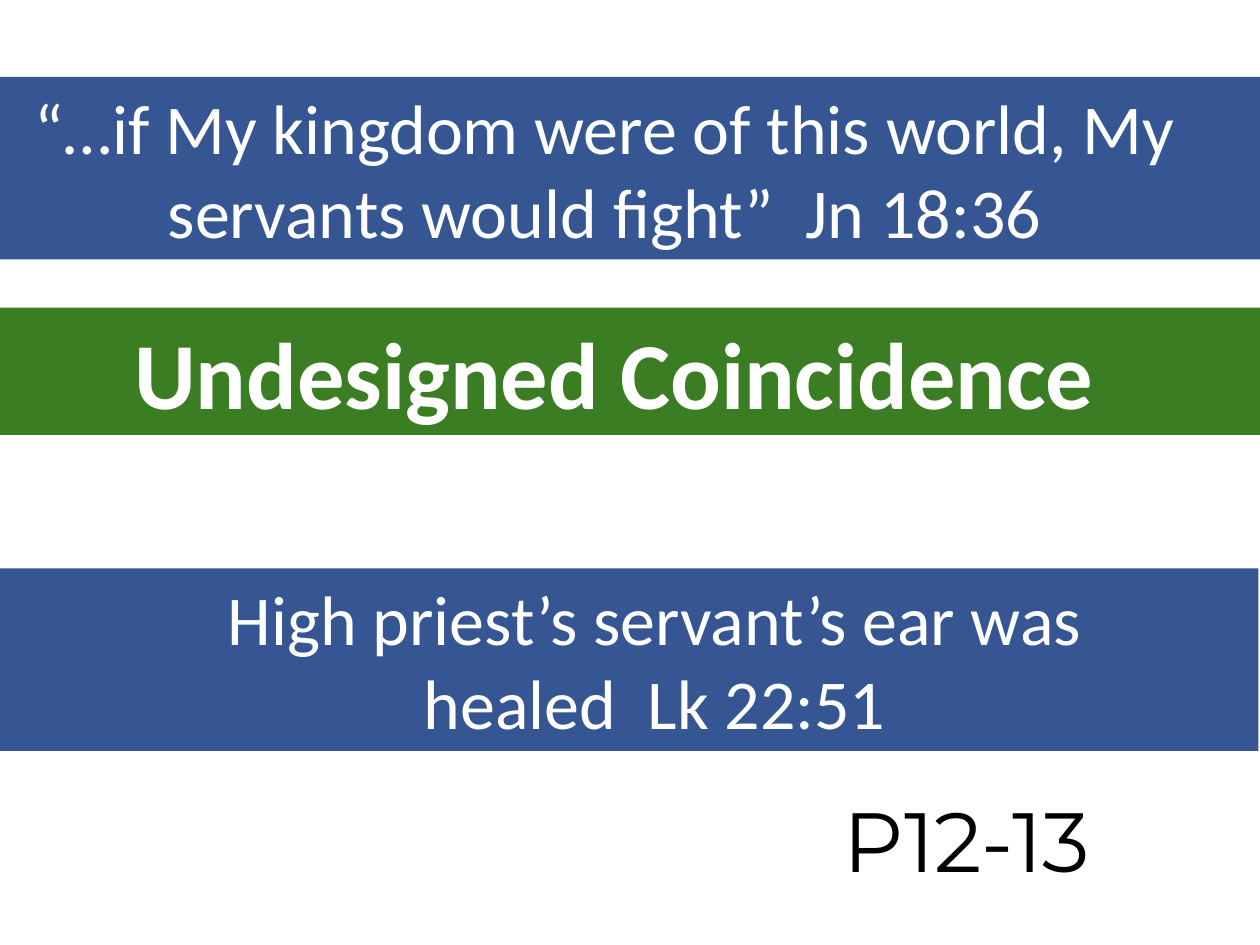
from pptx import Presentation
from pptx.dml.color import RGBColor
from pptx.enum.shapes import MSO_SHAPE
from pptx.enum.text import MSO_ANCHOR, MSO_AUTO_SIZE, PP_ALIGN
from pptx.util import Cm, Pt

RECTANGLE = MSO_SHAPE.RECTANGLE
MIDDLE = MSO_ANCHOR.MIDDLE
NO_AUTOFIT = MSO_AUTO_SIZE.NONE
LEFT, CENTER = PP_ALIGN.LEFT, PP_ALIGN.CENTER
BLUE, GREEN, WHITE, BLACK = "365693", "3B7D23", "FFFFFF", "000000"
TITLE_ONLY = 5
SLIDE_WIDTH, SLIDE_HEIGHT = 25.4, 19.05


def color(hex_value):
    return RGBColor.from_string(hex_value)


def fill_with(region, hex_value):
    region.fill.solid()
    region.fill.fore_color.rgb = color(hex_value)
    region.line.fill.background()


def place(region, box):
    region.left, region.top, region.width, region.height = map(Cm, box)


def write(region, lines, size, font="Calibri", ink=WHITE, bold=False,
          align=CENTER, left_inset=0.25, right_inset=0.25):
    frame = region.text_frame
    frame.word_wrap = True
    frame.auto_size = NO_AUTOFIT
    frame.vertical_anchor = MIDDLE
    frame.margin_left, frame.margin_right = Cm(left_inset), Cm(right_inset)
    frame.margin_top = frame.margin_bottom = Cm(0.13)
    for number, line in enumerate(lines):
        paragraph = frame.add_paragraph() if number else frame.paragraphs[0]
        paragraph.alignment = align
        run = paragraph.add_run()
        run.text = line
        run.font.name = font
        run.font.size = Pt(size)
        run.font.bold = bold
        run.font.color.rgb = color(ink)


def add_verse_band(slide, box, lines, **insets):
    band = slide.shapes.add_shape(RECTANGLE, *map(Cm, box))
    band.shadow.inherit = False
    fill_with(band, BLUE)
    write(band, lines, size=40, **insets)


def add_title_band(slide, box, heading):
    title = slide.shapes.title
    place(title, box)
    fill_with(title, GREEN)
    write(title, [heading], size=54, bold=True, left_inset=0)


def add_page_reference(slide, box, pages):
    reference = slide.shapes.add_textbox(*map(Cm, box))
    write(reference, [pages], size=48, font="Montserrat", ink=BLACK, align=LEFT)


def main():
    deck = Presentation()
    deck.slide_width, deck.slide_height = Cm(SLIDE_WIDTH), Cm(SLIDE_HEIGHT)
    slide = deck.slides.add_slide(deck.slide_layouts[TITLE_ONLY])
    slide.background.fill.solid()
    slide.background.fill.fore_color.rgb = color(WHITE)

    add_verse_band(slide, (0, 1.55, SLIDE_WIDTH, 3.68),
                   ["“…if My kingdom were of this world, My",
                    "servants would fight”  Jn 18:36"], right_inset=1.27)
    add_title_band(slide, (-0.38, 6.2, SLIDE_WIDTH + 0.38, 2.57),
                   "Undesigned Coincidence")
    add_verse_band(slide, (0, 11.46, 25.37, 3.68),
                   ["High priest’s servant’s ear was",
                    "healed  Lk 22:51"], left_inset=1.27)
    add_page_reference(slide, (16.76, 15.75, 7.04, 2.31), "P12-13")
    deck.save("out.pptx")


if __name__ == "__main__":
    main()
